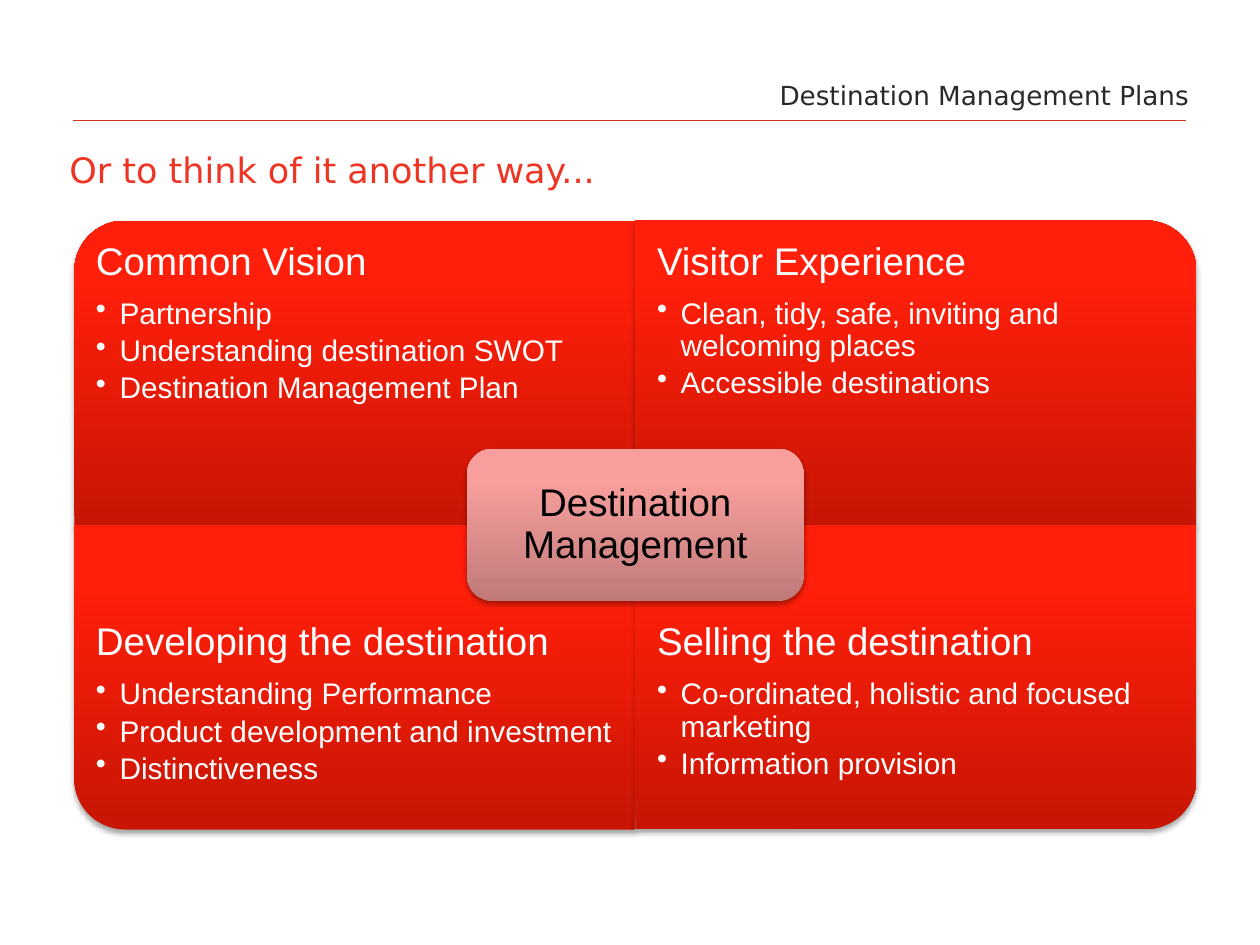
import pptx
import pptx.dml.color
import pptx.enum.shapes
import pptx.enum.text
import pptx.oxml
import pptx.oxml.ns
import pptx.util

Pt = pptx.util.Pt
RGB = pptx.dml.color.RGBColor
SHAPE = pptx.enum.shapes.MSO_SHAPE
ALIGN = pptx.enum.text.PP_ALIGN
ANCHOR = pptx.enum.text.MSO_ANCHOR
NS = pptx.oxml.ns.nsdecls("a")

RED = RGB(0xEE, 0x35, 0x24)
RULE = RGB(0xCD, 0x34, 0x25)
GREY = RGB(0x29, 0x29, 0x29)
WHITE = RGB(0xFF, 0xFF, 0xFF)
BLACK = RGB(0, 0, 0)
RED_STOPS = [(0, "C81504"), (80, "FF1F0A"), (100, "FF200C")]
PINK_STOPS = [(0, "BF7A79"), (80, "F89F9D"), (100, "FB9E9C")]

TITLE = "Or to think of it another way..."
SECTION = "Destination Management Plans"
CENTRE = "Destination Management"
QUADRANTS = [
    (0, 0, 270, "Common Vision",
     ["Partnership", "Understanding destination SWOT", "Destination Management Plan"]),
    (0, 1, 0, "Visitor Experience",
     ["Clean, tidy, safe, inviting and welcoming places", "Accessible destinations"]),
    (1, 0, 180, "Developing the destination",
     ["Understanding Performance", "Product development and investment", "Distinctiveness"]),
    (1, 1, 90, "Selling the destination",
     ["Co-ordinated, holistic and focused marketing", "Information provision"]),
]

LEFT, TOP, W, H = 42.5, 126, 320.6, 174
HEADING = {"size": Pt(22), "name": "Arial"}
ITEM = {"size": Pt(17), "name": "Arial"}
SPACED = {"line_spacing": 0.9, "space_after": Pt(8.5)}
ITEM_SPACED = {"line_spacing": 0.9, "space_after": Pt(2.9)}


def apply(obj, values):
    for name, value in values.items():
        setattr(obj, name, value)


def set_frame(tf, margins, anchor=ANCHOR.TOP):
    left, top, right, bottom = map(Pt, margins)
    apply(tf, {"word_wrap": True, "auto_size": pptx.enum.text.MSO_AUTO_SIZE.NONE,
               "vertical_anchor": anchor, "margin_left": left, "margin_top": top,
               "margin_right": right, "margin_bottom": bottom})


def write(p, text, font, color, layout):
    apply(p, layout)
    r = p.add_run()
    r.text = text
    apply(r.font, font)
    r.font.color.rgb = color


def set_bullet(p, char=None, indent=0):
    pPr = p._p.get_or_add_pPr()
    pPr.set("marL", str(Pt(indent)))
    pPr.set("indent", str(-Pt(indent)))
    tag = f'<a:buChar {NS} char="{char}"/>' if char else f"<a:buNone {NS}/>"
    pPr.append(pptx.oxml.parse_xml(tag))


def add_panel(s, kind, cx, cy, w, h, stops, rotation=0):
    if rotation % 180:
        w, h = h, w
    sp = s.shapes.add_shape(kind, Pt(cx - w / 2), Pt(cy - h / 2), Pt(w), Pt(h))
    sp.rotation = rotation
    sp.line.fill.background()
    gs = "".join(f'<a:gs pos="{pos * 1000}"><a:srgbClr val="{color}"/></a:gs>'
                 for pos, color in stops)
    sp._element.spPr.find(pptx.oxml.ns.qn("a:ln")).addprevious(pptx.oxml.parse_xml(
        f'<a:gradFill {NS} rotWithShape="0"><a:gsLst>{gs}</a:gsLst>'
        '<a:lin ang="16200000" scaled="0"/></a:gradFill>'))
    sp._element.spPr.append(pptx.oxml.parse_xml(
        f'<a:effectLst {NS}><a:outerShdw blurRad="{Pt(3.1)}" dist="{Pt(1.8)}" dir="5400000" '
        'rotWithShape="0"><a:srgbClr val="000000"><a:alpha val="35000"/></a:srgbClr>'
        '</a:outerShdw></a:effectLst>'))
    return sp


def add_placeholder_text(sp, box, margins, text, size, color, align):
    apply(sp, dict(zip(("left", "top", "width", "height"), map(Pt, box))))
    set_frame(sp.text_frame, margins)
    p = sp.text_frame.paragraphs[0]
    set_bullet(p)
    write(p, text, {"size": Pt(size), "name": "DejaVu Sans"}, color,
          {"alignment": align, "space_before": Pt(0)})


def add_quadrant(s, row, col, rotation, heading, items):
    x, y = LEFT + col * W, TOP + row * H
    add_panel(s, SHAPE.ROUND_1_RECTANGLE, x + W / 2, y + H / 2, W, H, RED_STOPS, rotation)
    sp = s.shapes.add_textbox(Pt(x), Pt(y + row * H / 4), Pt(W), Pt(H * 0.75))
    tf = sp.text_frame
    set_frame(tf, [12.4] * 4)
    write(tf.paragraphs[0], heading, HEADING, WHITE, SPACED)
    for item in items:
        p = tf.add_paragraph()
        p.level = 1
        set_bullet(p, "•", 13.5)
        write(p, item, ITEM, WHITE, ITEM_SPACED)


def main():
    prs = pptx.Presentation()
    prs.slide_width, prs.slide_height = Pt(720), Pt(540)
    s = prs.slides.add_slide(prs.slide_layouts[1])

    rule = s.shapes.add_connector(pptx.enum.shapes.MSO_CONNECTOR.STRAIGHT,
                                  Pt(42), Pt(69), Pt(678), Pt(69))
    rule.line.color.rgb = RULE
    rule.line.width = Pt(0.75)
    rule._element.spPr.append(pptx.oxml.parse_xml(f"<a:effectLst {NS}/>"))

    add_placeholder_text(s.shapes.title, (39.6, 81.4, 640.8, 45.4), (0, 3.6, 7.2, 3.6),
                         TITLE, 20, RED, ALIGN.LEFT)
    add_placeholder_text(s.placeholders[1], (397.4, 41.8, 282.2, 27.4), (7.2, 3.6, 0, 5.8),
                         SECTION, 15, GREY, ALIGN.RIGHT)

    for quadrant in QUADRANTS:
        add_quadrant(s, *quadrant)

    sp = add_panel(s, SHAPE.ROUNDED_RECTANGLE, LEFT + W, TOP + H, W * 0.6, H / 2, PINK_STOPS)
    set_frame(sp.text_frame, [10.8] * 4, ANCHOR.MIDDLE)
    write(sp.text_frame.paragraphs[0], CENTRE, HEADING, BLACK,
          {"alignment": ALIGN.CENTER, "line_spacing": 0.9})

    prs.save("out.pptx")


if __name__ == "__main__":
    main()
